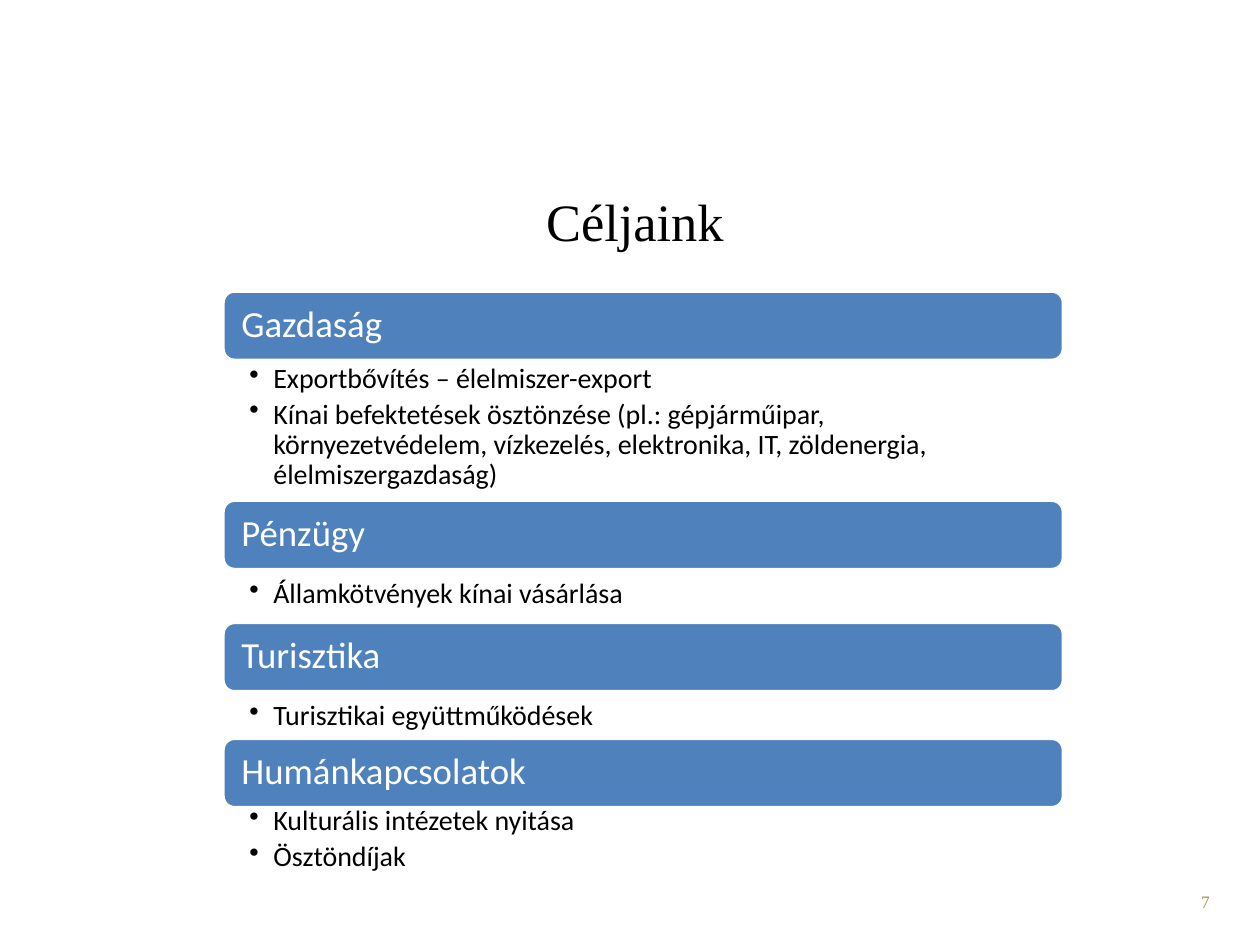
import pptx
import pptx.util
import pptx.dml.color
import pptx.enum.shapes
import pptx.enum.text
import pptx.oxml.ns
import lxml.etree

Inch = pptx.util.Inches
Pt = pptx.util.Pt
Align = pptx.enum.text.PP_ALIGN
Anchor = pptx.enum.text.MSO_ANCHOR

LEFT, WIDTH, BAR = 1.77, 6.67, 0.55

# heading, bar top, list top, list height, points
GOALS = [
    ("Gazdaság", 2.31, 2.86, 1.09, [
        "Exportbővítés – élelmiszer-export",
        "Kínai befektetések ösztönzése (pl.: gépjárműipar, "
        "környezetvédelem, vízkezelés, elektronika, IT, zöldenergia, "
        "élelmiszergazdaság)"]),
    ("Pénzügy", 3.97, 4.57, 0.38, ["Államkötvények kínai vásárlása"]),
    ("Turisztika", 4.94, 5.54, 0.38, ["Turisztikai együttműködések"]),
    ("Humánkapcsolatok", 5.86, 6.37, 0.61, [
        "Kulturális intézetek nyitása", "Ösztöndíjak"]),
]


def color(code):
    return pptx.dml.color.RGBColor.from_string(code)


def style(para, size, code, face="Calibri", align=Align.LEFT):
    para.alignment = align
    para.font.size = Pt(size)
    para.font.name = face
    para.font.color.rgb = color(code)


def frame(shape, anchor, left, top, right, bottom):
    text = shape.text_frame
    text.word_wrap = True
    text.auto_size = pptx.enum.text.MSO_AUTO_SIZE.NONE
    text.vertical_anchor = anchor
    text.margin_left, text.margin_top = Inch(left), Inch(top)
    text.margin_right, text.margin_bottom = Inch(right), Inch(bottom)
    return text


def bullet(para):
    props = para._p.get_or_add_pPr()
    props.set("marL", str(Inch(0.19)))
    props.set("indent", str(-Inch(0.19)))
    mark = lxml.etree.SubElement(props, pptx.oxml.ns.qn("a:buChar"))
    mark.set("char", "•")


def add_title(slide, words):
    title = slide.shapes.title
    title.left, title.top = Inch(0.79), Inch(1.4)
    title.width, title.height = Inch(8.5), Inch(0.55)
    text = frame(title, Anchor.TOP, 0.1, 0.1, 0.1, 0)
    text.text = words
    style(text.paragraphs[0], 30, "000000", "Times New Roman", Align.CENTER)


def add_bar(slide, top, words):
    bar = slide.shapes.add_shape(
        pptx.enum.shapes.MSO_SHAPE.ROUNDED_RECTANGLE,
        Inch(LEFT), Inch(top), Inch(WIDTH), Inch(BAR))
    bar.shadow.inherit = False
    bar.fill.solid()
    bar.fill.fore_color.rgb = color("4F81BD")
    bar.line.color.rgb = color("FFFFFF")
    bar.line.width = Pt(2)
    text = frame(bar, Anchor.MIDDLE, 0.12, 0.09, 0.12, 0.09)
    text.text = words
    para = text.paragraphs[0]
    para.line_spacing = 0.9
    style(para, 21, "FFFFFF")


def add_list(slide, top, height, points):
    box = slide.shapes.add_textbox(
        Inch(LEFT), Inch(top), Inch(WIDTH), Inch(height))
    text = frame(box, Anchor.TOP, 0.21, 0.03, 0.16, 0.03)
    text.text = "\n".join(points)
    for para in text.paragraphs:
        bullet(para)
        para.line_spacing = 0.9
        para.space_after = Pt(3.2)
        style(para, 16, "000000")


def add_page(slide, words):
    box = slide.shapes.add_textbox(
        Inch(7.37), Inch(7.02), Inch(2.33), Inch(0.4))
    text = frame(box, Anchor.TOP, 0.1, 0.05, 0.1, 0.05)
    text.text = words
    style(text.paragraphs[0], 10, "A69765", "Times New Roman", Align.RIGHT)


def main():
    deck = pptx.Presentation()
    deck.slide_width, deck.slide_height = Inch(10), Inch(7.5)
    slide = deck.slides.add_slide(deck.slide_layouts[5])
    add_page(slide, "7")
    add_title(slide, "Céljaink")
    # Each goal: a bar with its list below
    for name, top, below, height, points in GOALS:
        add_bar(slide, top, name)
        add_list(slide, below, height, points)
    deck.save("out.pptx")


if __name__ == "__main__":
    main()
